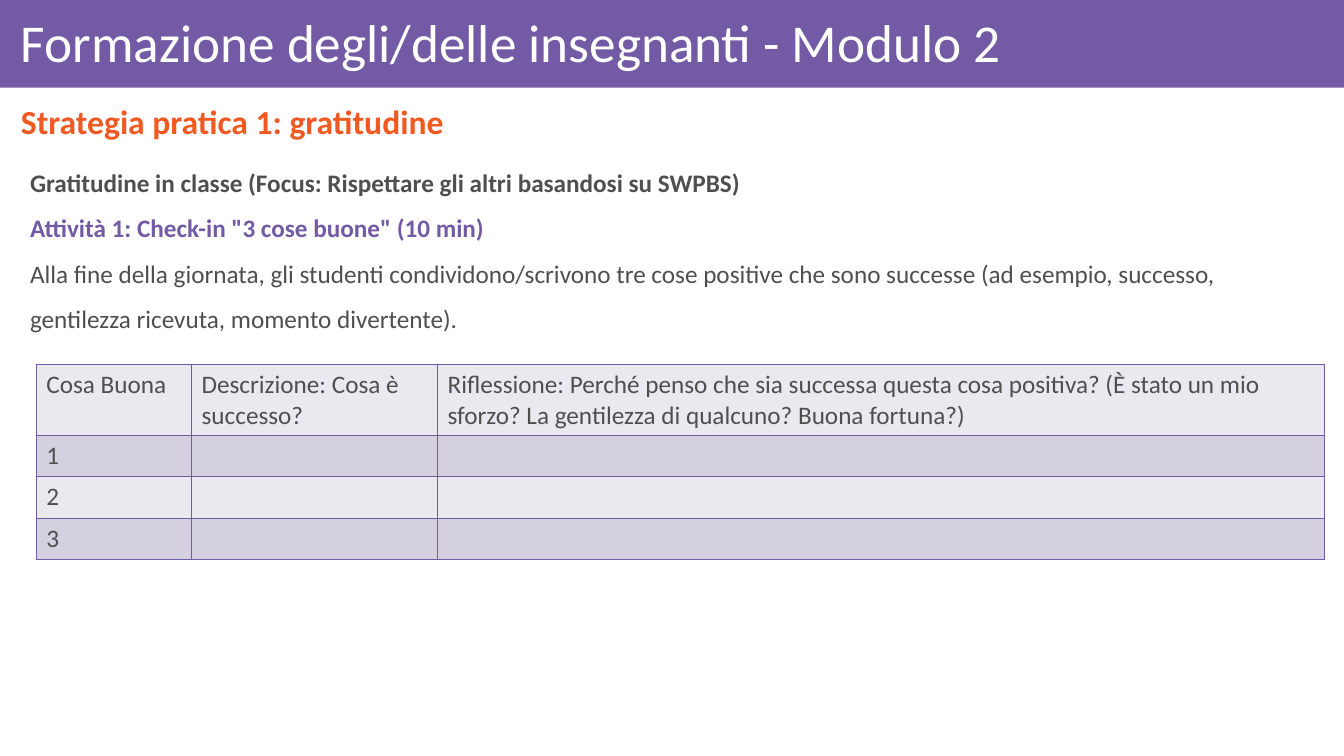
from dataclasses import dataclass

from lxml import etree
from pptx import Presentation
from pptx.dml.color import RGBColor
from pptx.enum.shapes import MSO_SHAPE
from pptx.enum.text import MSO_ANCHOR, PP_ALIGN
from pptx.oxml.ns import qn
from pptx.util import Inches, Pt

RECT = MSO_SHAPE.RECTANGLE
TOP, MIDDLE = MSO_ANCHOR.TOP, MSO_ANCHOR.MIDDLE
LEFT, JUSTIFY = PP_ALIGN.LEFT, PP_ALIGN.JUSTIFY

FONT = "Calibri"
COLORS = {
    "purple": "735AA5",
    "orange": "F05A22",
    "text": "4F4F50",
    "white": "FFFFFF",
    "light": "EBE9F0",
    "band": "D4D0E0",
}


@dataclass
class Para:
    text: str
    size: float = 18
    color: str = "text"
    bold: bool = False
    spacing: float = 1.0
    align: PP_ALIGN = LEFT


@dataclass
class Box:
    left: float
    top: float
    width: float
    height: float
    anchor: MSO_ANCHOR
    paras: list[Para]


BOXES = [
    Box(0.11, 0.93, 13.06, 0.6, MIDDLE, [
        Para("Strategia pratica 1: gratitudine", 24, "orange", True, 0.9, JUSTIFY),
    ]),
    Box(0.11, 0.02, 13.06, 0.78, MIDDLE, [
        Para("Formazione degli/delle insegnanti - Modulo 2", 38, "white"),
    ]),
    Box(0.2, 1.46, 12.93, 5.1, TOP, [
        Para("Gratitudine in classe (Focus: Rispettare gli altri basandosi su SWPBS)",
             bold=True, spacing=1.5),
        Para('Attività 1: Check-in "3 cose buone" (10 min)',
             color="purple", bold=True, spacing=1.5),
        Para("Alla fine della giornata, gli studenti condividono/scrivono tre cose "
             "positive che sono successe (ad esempio, successo, gentilezza ricevuta, "
             "momento divertente).", spacing=1.5),
    ]),
]

COL_WIDTHS = [1.54, 2.44, 8.8]
ROW_HEIGHTS = [0.69, 0.41, 0.41, 0.41]
ROWS = [
    ["Cosa Buona", "Descrizione: Cosa è successo?",
     "Riflessione: Perché penso che sia successa questa cosa positiva? "
     "(È stato un mio sforzo? La gentilezza di qualcuno? Buona fortuna?)"],
    *([str(n), "", ""] for n in range(1, 4)),
]


def rgb(name: str) -> RGBColor:
    return RGBColor.from_string(COLORS[name])


def write_para(p, para: Para) -> None:
    p.text = para.text
    p.alignment = para.align
    p.line_spacing = para.spacing
    p.font.name = FONT
    p.font.size = Pt(para.size)
    p.font.bold = para.bold
    p.font.color.rgb = rgb(para.color)


def add_box(slide, box: Box) -> None:
    sp = slide.shapes.add_textbox(Inches(box.left), Inches(box.top),
                                  Inches(box.width), Inches(box.height))
    tf = sp.text_frame
    tf.word_wrap = True
    tf.vertical_anchor = box.anchor
    for i, para in enumerate(box.paras):
        write_para(tf.add_paragraph() if i else tf.paragraphs[0], para)


def set_borders(cell, color: str) -> None:
    tc_pr = cell._tc.get_or_add_tcPr()
    for i, side in enumerate(("lnL", "lnR", "lnT", "lnB")):
        ln = etree.Element(qn(f"a:{side}"), w=str(Pt(1)))
        fill = etree.SubElement(ln, qn("a:solidFill"))
        etree.SubElement(fill, qn("a:srgbClr"), val=COLORS[color])
        tc_pr.insert(i, ln)  # borders precede the cell fill


def add_gratitude_table(slide, left: float, top: float) -> None:
    table = slide.shapes.add_table(
        len(ROWS), len(COL_WIDTHS), Inches(left), Inches(top),
        Inches(sum(COL_WIDTHS)), Inches(sum(ROW_HEIGHTS))).table
    for column, width in zip(table.columns, COL_WIDTHS):
        column.width = Inches(width)
    for r, (texts, height) in enumerate(zip(ROWS, ROW_HEIGHTS)):
        table.rows[r].height = Inches(height)
        for c, text in enumerate(texts):
            cell = table.cell(r, c)
            cell.fill.solid()
            cell.fill.fore_color.rgb = rgb("band" if r % 2 else "light")
            set_borders(cell, "purple")
            write_para(cell.text_frame.paragraphs[0], Para(text))


def main() -> None:
    prs = Presentation()
    prs.slide_width, prs.slide_height = Inches(13.33), Inches(7.5)
    slide = prs.slides.add_slide(prs.slide_layouts[6])

    # Title band
    band = slide.shapes.add_shape(RECT, 0, 0, prs.slide_width, Inches(0.87))
    band.shadow.inherit = False
    band.fill.solid()
    band.fill.fore_color.rgb = rgb("purple")
    band.line.fill.background()

    # Headings and body text
    for box in BOXES:
        add_box(slide, box)

    # Worksheet table
    add_gratitude_table(slide, 0.36, 3.62)

    prs.save("out.pptx")


if __name__ == "__main__":
    main()
